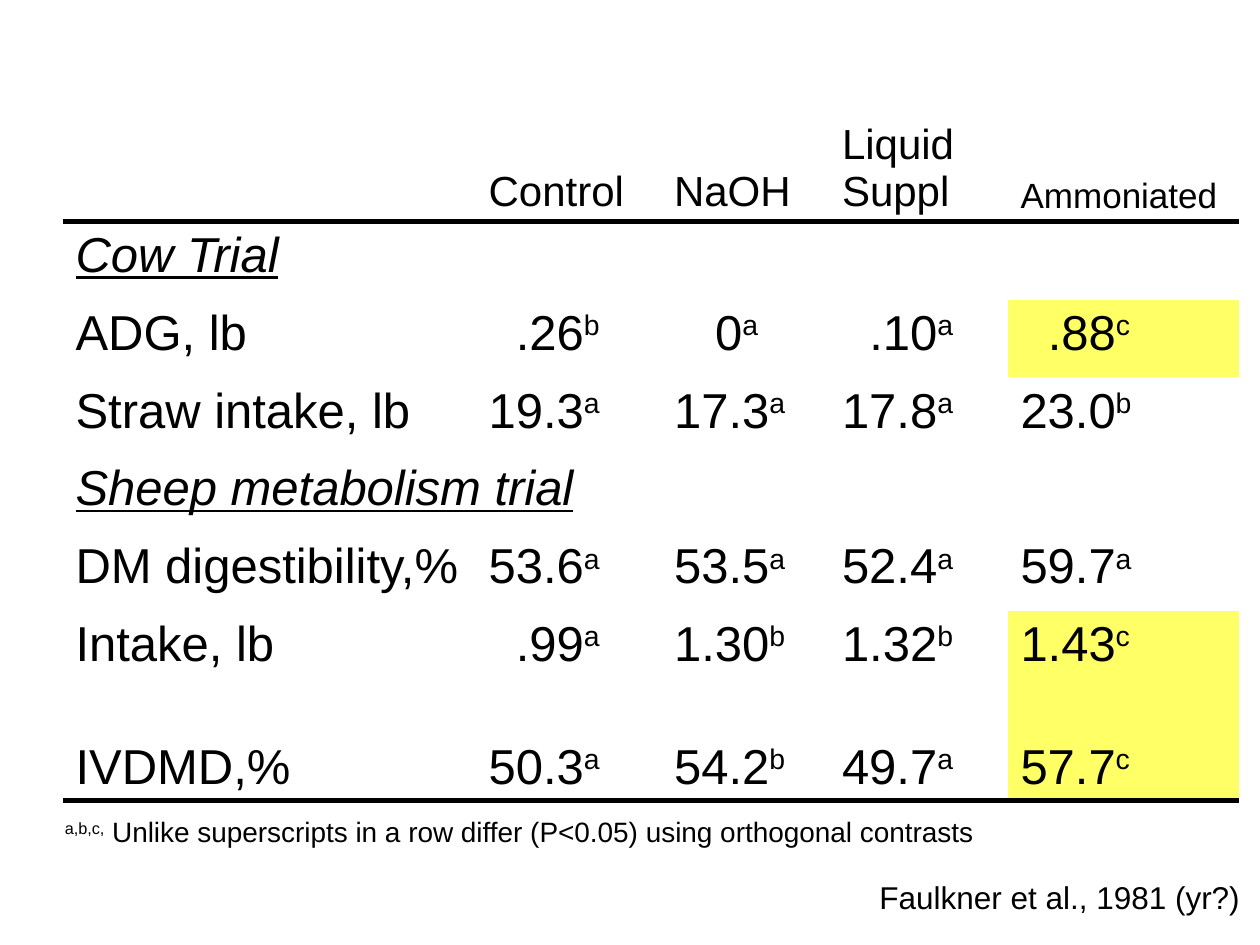
from lxml import etree
from pptx import Presentation
from pptx.dml.color import RGBColor
from pptx.enum.text import MSO_ANCHOR, MSO_AUTO_SIZE
from pptx.oxml.ns import qn
from pptx.util import Pt

BOTTOM = MSO_ANCHOR.BOTTOM
FIT_SHAPE = MSO_AUTO_SIZE.SHAPE_TO_FIT_TEXT
BLACK = RGBColor(0, 0, 0)
YELLOW = RGBColor(0xFF, 0xFF, 0x66)
FONT = "Arial"
NO_STYLE = "{2D5ABB26-0587-4C30-8999-92F81FD0307C}"

COLUMN_WIDTHS = [236, 106, 96, 102, 132]
ROW_HEIGHTS = [44.5] * 7 + [64]
HEADERS = [("Control", 24), ("NaOH", 24), ("Liquid Suppl", 24), ("Ammoniated", 20)]
SECTIONS = {1: ("Cow Trial", 1), 4: ("Sheep metabolism trial", 2)}
MEASURES = {
    2: ("ADG, lb", [(".26", "b"), ("0", "a"), (".10", "a"), (".88", "c")]),
    3: ("Straw intake, lb", [("19.3", "a"), ("17.3", "a"), ("17.8", "a"), ("23.0", "b")]),
    5: ("DM digestibility,%", [("53.6", "a"), ("53.5", "a"), ("52.4", "a"), ("59.7", "a")]),
    6: ("Intake, lb", [(".99", "a"), ("1.30", "b"), ("1.32", "b"), ("1.43", "c")]),
    7: ("IVDMD,%", [("50.3", "a"), ("54.2", "b"), ("49.7", "a"), ("57.7", "c")]),
}
INDENTS = {".": 15.6, "0": 23.4}
HIGHLIGHTED_ROWS = (2, 6, 7)


def add_run(p, text, size, superscript=False):
    """Append a formatted run to a paragraph and return it."""
    r = p.add_run()
    r.text = text
    r.font.name, r.font.size = FONT, Pt(size)
    r.font.color.rgb = BLACK
    if superscript:
        r.font._element.set("baseline", "30000")
    return r


def add_bottom_rule(cell):
    """Draw a thick black border under a cell."""
    line = etree.Element(qn("a:lnB"), w=str(Pt(3)))
    fill = etree.SubElement(line, qn("a:solidFill"))
    etree.SubElement(fill, qn("a:srgbClr"), val=str(BLACK))
    cell._tc.get_or_add_tcPr().insert(0, line)


def fill_header(table):
    """Write the treatment names above the columns."""
    for col, (name, size) in enumerate(HEADERS, 1):
        add_run(table.cell(0, col).text_frame.paragraphs[0], name, size)


def fill_sections(table):
    """Write the underlined trial names across merged cells."""
    for row, (name, last_col) in SECTIONS.items():
        cell = table.cell(row, 0)
        cell.merge(table.cell(row, last_col))
        r = add_run(cell.text_frame.paragraphs[0], name, 28)
        r.font.italic = r.font.underline = True


def fill_measures(table):
    """Write each measure with its values and superscripts."""
    for row, (label, values) in MEASURES.items():
        add_run(table.cell(row, 0).text_frame.paragraphs[0], label, 28)
        for col, (value, mark) in enumerate(values, 1):
            p = table.cell(row, col).text_frame.paragraphs[0]
            indent = INDENTS.get(value[0], 0)
            p._p.get_or_add_pPr().set("marL", str(Pt(indent)))
            add_run(p, value, 28)
            add_run(p, mark, 28, True)


def add_results_table(s, left, top, width, height):
    """Place the table of trial results in the given box."""
    table = s.shapes.add_table(len(ROW_HEIGHTS), len(COLUMN_WIDTHS),
                               Pt(left), Pt(top), Pt(width), Pt(height)).table
    table._tbl.tblPr.find(qn("a:tableStyleId")).text = NO_STYLE
    table.first_row = table.horz_banding = False
    for column, column_width in zip(table.columns, COLUMN_WIDTHS):
        column.width = Pt(column_width)
    for row, row_height in zip(table.rows, ROW_HEIGHTS):
        row.height = Pt(row_height)
    fill_header(table)
    fill_sections(table)
    fill_measures(table)
    last_row, last_col = len(ROW_HEIGHTS) - 1, len(COLUMN_WIDTHS) - 1
    for cell in table.iter_cells():
        cell.fill.background()
    for row in HIGHLIGHTED_ROWS:
        cell = table.cell(row, last_col)
        cell.fill.solid()
        cell.fill.fore_color.rgb = YELLOW
    for row in (0, last_row):
        for col in range(len(COLUMN_WIDTHS)):
            cell = table.cell(row, col)
            add_bottom_rule(cell)
            cell.vertical_anchor = BOTTOM


def add_note(s, left, top, width, height, size, text, marks=""):
    """Place a single-line note, led by superscript marks if given."""
    tf = s.shapes.add_textbox(Pt(left), Pt(top), Pt(width), Pt(height)).text_frame
    tf.word_wrap = True
    tf.auto_size = FIT_SHAPE
    p = tf.paragraphs[0]
    if marks:
        add_run(p, marks, size, True)
    add_run(p, text, size)


def main():
    """Build and save the slide."""
    prs = Presentation()
    prs.slide_width, prs.slide_height = Pt(720), Pt(540)
    s = prs.slides.add_slide(prs.slide_layouts[6])
    add_results_table(s, 36, 66, sum(COLUMN_WIDTHS), sum(ROW_HEIGHTS))
    add_note(s, 495.5, 498, 224, 29, 18, "Faulkner et al., 1981 (yr?)")
    add_note(s, 30, 462, 540, 26.5, 16,
             " Unlike superscripts in a row differ (P<0.05) using orthogonal contrasts",
             "a,b,c,")
    prs.save("out.pptx")


if __name__ == "__main__":
    main()
